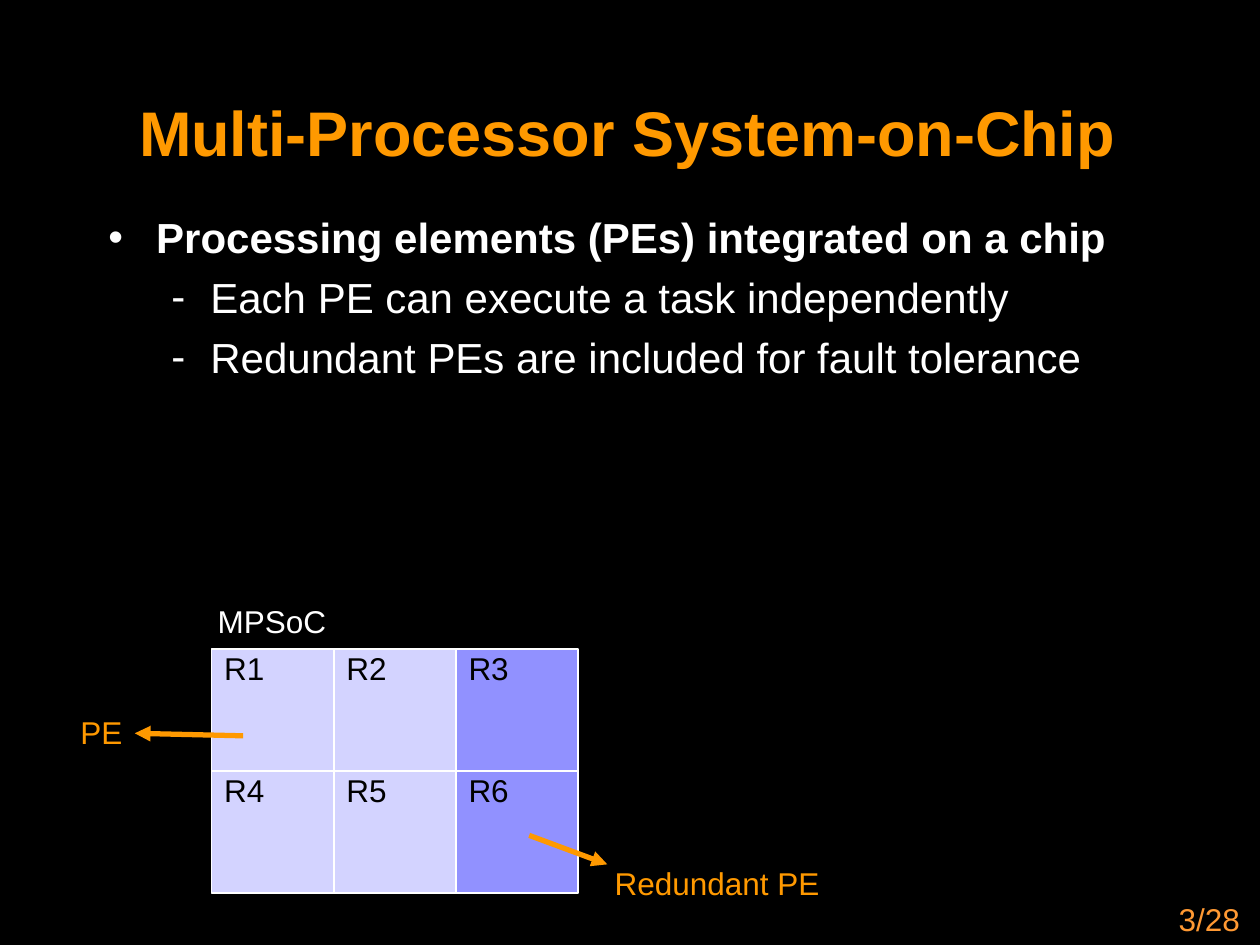
from typing import NamedTuple

from lxml.etree import SubElement
from pptx import Presentation
from pptx.dml.color import RGBColor
from pptx.enum.shapes import MSO_CONNECTOR as Connector, MSO_SHAPE as Preset
from pptx.enum.text import MSO_ANCHOR as Anchor, MSO_AUTO_SIZE as AutoSize, PP_ALIGN as Align
from pptx.oxml.ns import qn
from pptx.util import Inches, Pt

FONT = "Arial"
BLACK, WHITE, ORANGE, PAGE_ORANGE = "000000", "FFFFFF", "FF9900", "FF9933"
REGULAR, REDUNDANT = "D3D3FF", "9191FF"
GRID_LEFT, GRID_TOP, CELL = 1.68, 5.15, 0.97
COLUMNS, ROWS = 3, 2
LABEL_HEIGHT = 0.4


class Box(NamedTuple):
    left: float
    top: float
    width: float
    height: float


class Bullet(NamedTuple):
    text: str
    level: int
    mark: str
    margin: float
    hanging: float
    bold: bool


class Callout(NamedTuple):
    text: str
    box: Box
    start: tuple[float, float]
    end: tuple[float, float]


BULLETS = [
    Bullet("Processing elements (PEs) integrated on a chip", 0, "•", 0.38, 0.38, True),
    Bullet("Each PE can execute a task independently", 1, "-", 0.81, 0.31, False),
    Bullet("Redundant PEs are included for fault tolerance", 1, "-", 0.81, 0.31, False),
]
CALLOUTS = [
    Callout("PE", Box(0.54, 5.61, 0.54, LABEL_HEIGHT), (1.93, 5.84), (1.07, 5.82)),
    Callout("Redundant PE", Box(4.78, 6.81, 1.84, LABEL_HEIGHT), (4.2, 6.63), (4.82, 6.86)),
]


def rgb(color: str) -> RGBColor:
    return RGBColor.from_string(color)


def format_runs(paragraph, size: float, color: str, bold: bool = False) -> None:
    for run in paragraph.runs:
        run.font.name = FONT
        run.font.size = Pt(size)
        run.font.bold = bold
        run.font.color.rgb = rgb(color)


def place(shape, box: Box) -> None:
    shape.left, shape.top, shape.width, shape.height = map(Inches, box)


def add_label(shapes, text: str, box: Box, color: str, align=Align.LEFT, wrap: bool = False):
    label = shapes.add_textbox(*map(Inches, box))
    frame = label.text_frame
    frame.word_wrap = wrap
    frame.auto_size = AutoSize.NONE if wrap else AutoSize.SHAPE_TO_FIT_TEXT
    frame.text = text
    frame.paragraphs[0].alignment = align
    format_runs(frame.paragraphs[0], 18, color)


def add_cell(shapes, column: int, row: int) -> None:
    """Draw one processing element; the last column holds the redundant ones."""
    left, top = GRID_LEFT + column * CELL, GRID_TOP + row * CELL
    square = shapes.add_shape(Preset.RECTANGLE, *map(Inches, (left, top, CELL, CELL)))
    square.shadow.inherit = False
    square.fill.solid()
    square.fill.fore_color.rgb = rgb(REDUNDANT if column == COLUMNS - 1 else REGULAR)
    square.line.color.rgb = rgb(WHITE)
    square.line.width = Pt(1)
    name = f"R{row * COLUMNS + column + 1}"
    add_label(shapes, name, Box(left, top - 0.05, 0.52, LABEL_HEIGHT), BLACK)


def add_callout(shapes, callout: Callout) -> None:
    group = shapes.add_group_shape()
    add_label(group.shapes, callout.text, callout.box, ORANGE)
    arrow = group.shapes.add_connector(
        Connector.STRAIGHT, *map(Inches, callout.start + callout.end))
    arrow.line.color.rgb = rgb(ORANGE)
    arrow.line.width = Pt(3)
    SubElement(arrow.line._get_or_add_ln(), qn("a:tailEnd"), type="triangle")
    SubElement(arrow._element.spPr, qn("a:effectLst"))


def fill_title(title, text: str) -> None:
    place(title, Box(0.73, 0.58, 8.5, 0.93))
    frame = title.text_frame
    frame.text = text
    frame.auto_size = AutoSize.NONE
    frame.vertical_anchor = Anchor.MIDDLE
    frame.paragraphs[0].alignment = Align.CENTER
    format_runs(frame.paragraphs[0], 36, ORANGE, bold=True)


def fill_body(body, bullets: list[Bullet]) -> None:
    place(body, Box(0.76, 1.63, 8.5, 5.39))
    frame = body.text_frame
    frame.text = "\n".join(bullet.text for bullet in bullets)
    frame.auto_size = AutoSize.NONE
    for paragraph, bullet in zip(frame.paragraphs, bullets):
        paragraph.level = bullet.level
        paragraph.space_before = Pt(5.5)
        format_runs(paragraph, 24, WHITE, bullet.bold)
        properties = paragraph._p.get_or_add_pPr()
        properties.set("marL", str(Inches(bullet.margin)))
        properties.set("indent", str(-Inches(bullet.hanging)))
        SubElement(properties, qn("a:buFont"), typeface=FONT)
        SubElement(properties, qn("a:buChar"), char=bullet.mark)


def main() -> None:
    presentation = Presentation()
    presentation.slide_width, presentation.slide_height = Inches(10), Inches(7.5)
    slide = presentation.slides.add_slide(presentation.slide_layouts[1])
    slide.background.fill.solid()
    slide.background.fill.fore_color.rgb = rgb(BLACK)

    fill_title(slide.shapes.title, "Multi-Processor System-on-Chip")
    fill_body(slide.placeholders[1], BULLETS)

    for row in range(ROWS):
        for column in range(COLUMNS):
            add_cell(slide.shapes, column, row)
    add_label(slide.shapes, "MPSoC", Box(1.63, 4.73, 1.07, LABEL_HEIGHT), WHITE)
    for callout in CALLOUTS:
        add_callout(slide.shapes, callout)
    add_label(slide.shapes, "3/28", Box(7.86, 7.09, 2.08, 0.5), PAGE_ORANGE, Align.RIGHT, wrap=True)

    presentation.save("out.pptx")


if __name__ == "__main__":
    main()
